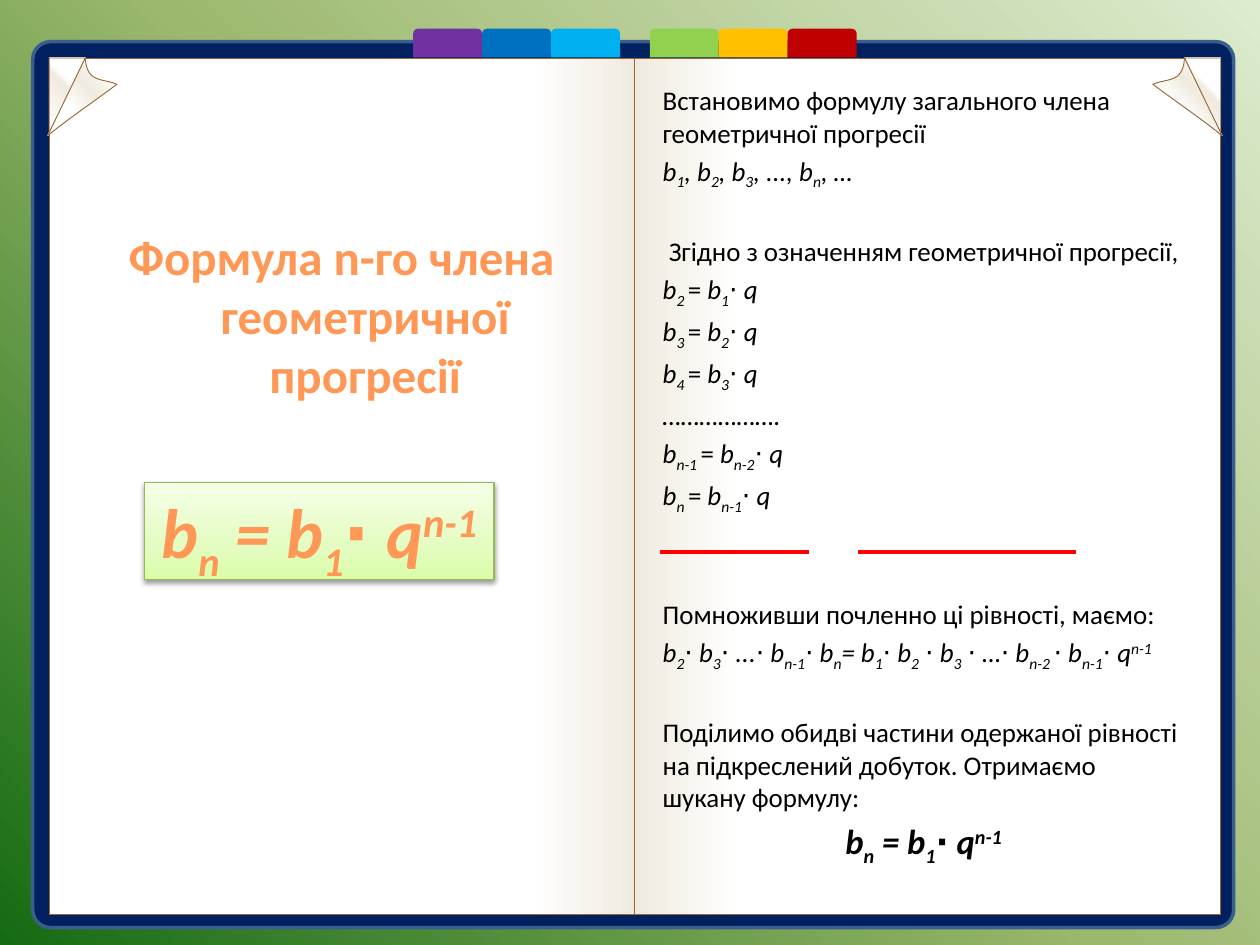
from lxml.etree import SubElement
from pptx import Presentation
from pptx.dml.color import RGBColor
from pptx.enum.shapes import MSO_CONNECTOR, MSO_SHAPE
from pptx.enum.text import MSO_ANCHOR, MSO_AUTO_SIZE, PP_ALIGN
from pptx.oxml.ns import qn
from pptx.util import Cm, Pt

COLORS = {
    "cover": "002060", "cover_edge": "3A5F8C", "paper": "FFFFFF", "shade": "F0EBE0",
    "edge": "996633", "text": "000000", "accent": "FF9856", "rule": "FF0000",
    "formula_edge": "98B955", "shadow": "000000",
    "sky": "00B0F0", "blue": "0070C0", "violet": "7030A0",
    "green": "92D050", "amber": "FFC000", "red": "C00000",
    "bg_light": "DDEBCF", "bg_mid": "9CB86E", "bg_dark": "156B13",
    "lime": "DAFDA7", "lime_mid": "E4FCC2", "lime_pale": "F5FFE7",
}
BACKGROUND = [(0, "bg_light"), (50, "bg_mid"), (100, "bg_dark")]
PAGE = [(0, "paper"), (82, "paper"), (100, "shade")]
FOLD = [(0, "paper"), (57, "shade"), (65, "paper")]
CURL = [(12, "paper"), (40, "shade"), (65, "paper")]
LIME = [(0, "lime"), (35, "lime_mid"), (100, "lime_pale")]

MIRROR = 25.6
BODY_SIZE = 15.4
GAP, GAP_1, GAP_2 = 3.1, 25, 46.9
GENERAL_TERM = "b_n_ = b_1_⋅ q^n-1^"
ITALIC = {"italic": True}
PLAIN = {"italic": False}
RESULT = {"italic": True, "bold": True, "size": Pt(19.8)}
BODY = [
    ("Встановимо формулу загального члена геометричної прогресії", PLAIN, GAP),
    ("b_1_, b_2_, b_3_, ..., b_n_, …", ITALIC, GAP),
    (" Згідно з означенням геометричної прогресії,", PLAIN, GAP_1),
    ("b_2 _~= ~b_1_⋅ q", ITALIC, GAP),
    ("b_3 _~= ~b_2_⋅ q", ITALIC, GAP),
    ("b_4 _~= ~b_3_⋅ q", ITALIC, GAP),
    ("……………….", ITALIC, GAP),
    ("b_n-1 _~= ~b_n-2_⋅ q", ITALIC, GAP),
    ("b_n _~= ~b_n-1_⋅ q", ITALIC, GAP),
    ("Помноживши почленно ці рівності, маємо:", PLAIN, GAP_2),
    ("b_2_⋅ b_3_⋅ ...⋅ b_n-1_⋅ b_n_= b_1_⋅ b_2_ ⋅ b_3_ ⋅ …⋅ b_n-2 _⋅ b_n-1_⋅ q^n-1^",
     ITALIC, GAP),
    ("Поділимо обидві частини одержаної рівності на підкреслений добуток. "
     "Отримаємо шукану формулу:", PLAIN, GAP_1),
    (GENERAL_TERM, RESULT, 4),
]


def rgb(name):
    return RGBColor.from_string(COLORS[name])


def set_gradient(fill, parent, stops, angle):
    fill.gradient()
    fill.gradient_angle = (360 - angle) % 360
    stop_list = parent.find(qn("a:gradFill")).find(qn("a:gsLst"))
    for old in list(stop_list):
        stop_list.remove(old)
    for pos, name in stops:
        stop = SubElement(stop_list, qn("a:gs"), pos=str(pos * 1000))
        SubElement(stop, qn("a:srgbClr"), val=COLORS[name])


def style(sp, fill, line=None, width=0.5, angle=0):
    sp.shadow.inherit = False
    if isinstance(fill, list):
        set_gradient(sp.fill, sp._element.spPr, fill, angle)
    else:
        sp.fill.solid()
        sp.fill.fore_color.rgb = rgb(fill)
    if line:
        sp.line.color.rgb = rgb(line)
        sp.line.width = Pt(width)
    else:
        sp.line.fill.background()
    return sp


def add_box(s, kind, box, *look, **options):
    return style(s.shapes.add_shape(kind, *map(Cm, box)), *look, **options)


def bezier(a, b, c, d, steps=12):
    for i in range(1, steps + 1):
        t = i / steps
        u = 1 - t
        yield tuple(u**3 * p + 3 * u * u * t * q + 3 * u * t * t * r + t**3 * e
                    for p, q, r, e in zip(a, b, c, d))


def add_outline(s, points, mirrored, fill, angle):
    points = [(Cm(MIRROR - x if mirrored else x), Cm(y)) for x, y in points]
    builder = s.shapes.build_freeform(*points[0])
    builder.add_line_segments(points[1:], close=True)
    style(builder.convert_to_shape(), fill, "edge", angle=angle)


def add_run(p, text, formats, color, baseline):
    r = p.add_run()
    r.text = text
    r.font.color.rgb = rgb(color)
    for name, value in formats.items():
        setattr(r.font, name, value)
    if baseline:
        r.font._element.set("baseline", str(baseline * 1000))


def add_markup(p, markup, formats, color):
    """_ toggles subscript, ^ superscript, ~ italic"""
    formats = {"name": "Calibri", "size": Pt(BODY_SIZE), **formats}
    baseline, text = 0, ""
    for char in markup + "~":
        if char not in "_^~":
            text += char
            continue
        if text:
            add_run(p, text, formats, color, baseline)
            text = ""
        if char == "~":
            formats["italic"] = not formats.get("italic")
        else:
            baseline = 0 if baseline else {"_": -25, "^": 30}[char]


def add_text(s, box, lines, color):
    tf = s.shapes.add_textbox(*map(Cm, box)).text_frame
    tf.word_wrap = True
    for i, (markup, formats, gap) in enumerate(lines):
        p = tf.add_paragraph() if i else tf.paragraphs[0]
        p.space_before = Pt(gap)
        add_markup(p, markup, formats, color)
    return tf


def add_rule(s, x1, x2, y):
    line = s.shapes.add_connector(MSO_CONNECTOR.STRAIGHT, Cm(x1), Cm(y), Cm(x2), Cm(y))
    line.line.color.rgb = rgb("rule")
    line.line.width = Pt(2)
    SubElement(line._element.spPr, qn("a:effectLst"))


def add_formula(s):
    sp = add_box(s, MSO_SHAPE.RECTANGLE, (2.92, 9.73, 7.04, 1.96),
                 LIME, "formula_edge", width=0.75, angle=270)
    effects = sp._element.spPr.find(qn("a:effectLst"))
    shadow = SubElement(effects, qn("a:outerShdw"), blurRad=str(Pt(3.1)),
                        dist=str(Pt(1.6)), dir="5400000", rotWithShape="0")
    color = SubElement(shadow, qn("a:srgbClr"), val=COLORS["shadow"])
    SubElement(color, qn("a:alpha"), val="38000")
    tf = sp.text_frame
    settings = {"word_wrap": False, "auto_size": MSO_AUTO_SIZE.SHAPE_TO_FIT_TEXT,
                "vertical_anchor": MSO_ANCHOR.TOP}
    for name, value in settings.items():
        setattr(tf, name, value)
    p = tf.paragraphs[0]
    p.alignment = PP_ALIGN.CENTER
    add_markup(p, GENERAL_TERM, {"size": Pt(40), "bold": True, "italic": True}, "accent")


def add_book(s):
    cover = add_box(s, MSO_SHAPE.ROUNDED_RECTANGLE, (0.66, 0.84, 24.21, 17.86),
                    "cover", "cover_edge", width=2)
    cover.adjustments[0] = 0.02
    for left, angle in ((0.99, 0), (12.8, 180)):
        add_box(s, MSO_SHAPE.RECTANGLE, (left, 1.17, 11.81, 17.27), PAGE, "edge", angle=angle)
    for mirrored in (False, True):
        add_outline(s, [(23.88, 1.17), (24.61, 2.69), (24.61, 1.17)], mirrored, FOLD, 315)


def add_tabs(s):
    for start, names in ((8.33, ("violet", "blue", "sky")), (13.1, ("green", "amber", "red"))):
        for i, name in enumerate(names):
            add_box(s, MSO_SHAPE.ROUND_2_SAME_RECTANGLE, (start + 1.39 * i, 0.58, 1.39, 0.58), name)


def add_curls(s):
    side, tip, top = (23.24, 1.7), (24.64, 2.74), (23.88, 1.17)
    points = [side, *bezier(side, (23.75, 2.08), (24.31, 2.46), tip),
              top, *bezier(top, (23.85, 1.68), (23.55, 1.57), side)]
    for mirrored in (False, True):
        add_outline(s, points, mirrored, CURL, 135)


def main():
    prs = Presentation()
    prs.slide_width, prs.slide_height = Cm(25.4), Cm(19.05)
    s = prs.slides.add_slide(prs.slide_layouts[6])
    fill = s.background.fill
    fill.gradient()
    set_gradient(fill, s._element.cSld.bg.bgPr, BACKGROUND, 135)
    add_book(s)
    body = add_text(s, (13.11, 1.57, 11.02, 16.28), BODY, "text")
    body.paragraphs[-1].alignment = PP_ALIGN.CENTER
    add_tabs(s)
    title = add_text(s, (1.27, 4.45, 11.23, 2.87),
                     [("Формула n-го члена геометричної прогресії",
                       {"size": Pt(28), "bold": True}, 5.6)], "accent")
    p = title.paragraphs[0]
    p.alignment = PP_ALIGN.CENTER
    for name, value in {"marL": Cm(0.95), "indent": -Cm(0.95)}.items():
        p._p.get_or_add_pPr().set(name, str(value))
    add_curls(s)
    for x1, x2 in ((13.31, 16.31), (17.3, 21.69)):
        add_rule(s, x1, x2, 11.13)
    add_formula(s)
    prs.save("out.pptx")


if __name__ == "__main__":
    main()
